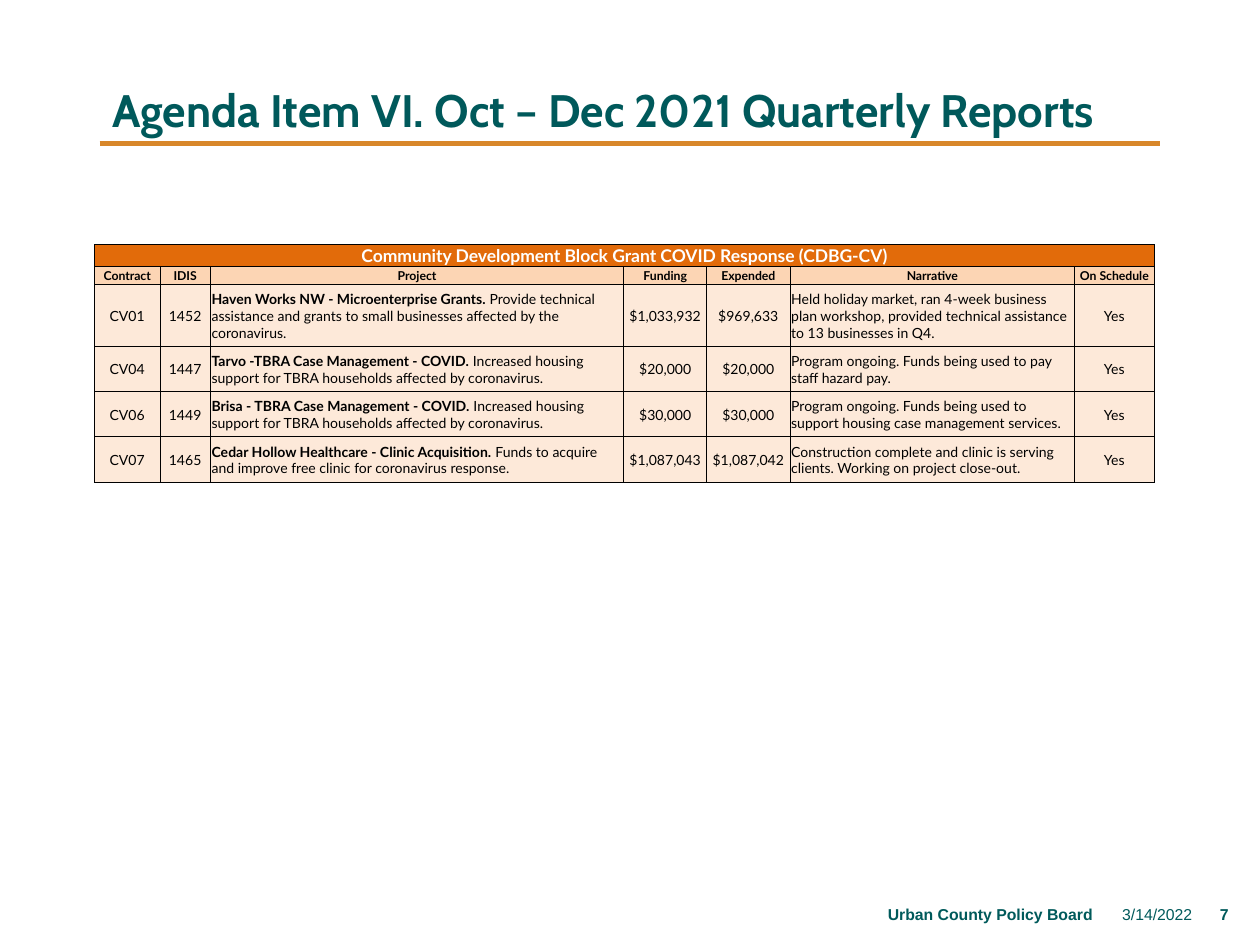
from lxml import etree
from pptx import Presentation
from pptx.dml.color import RGBColor
from pptx.enum.shapes import MSO_CONNECTOR
from pptx.enum.text import MSO_ANCHOR, PP_ALIGN
from pptx.oxml.ns import qn
from pptx.util import Inches, Pt

STRAIGHT = MSO_CONNECTOR.STRAIGHT
MIDDLE, BOTTOM = MSO_ANCHOR.MIDDLE, MSO_ANCHOR.BOTTOM
LEFT, CENTER, RIGHT = PP_ALIGN.LEFT, PP_ALIGN.CENTER, PP_ALIGN.RIGHT

TEAL = RGBColor(0x00, 0x59, 0x5B)
FOOTER_TEAL = RGBColor(0x00, 0x5A, 0x5B)
GOLD = RGBColor(0xD8, 0x87, 0x2A)
ORANGE = RGBColor(0xE2, 0x6B, 0x0A)
PEACH = RGBColor(0xFC, 0xD5, 0xB4)
CREAM = RGBColor(0xFD, 0xE9, 0xD9)
BLACK = RGBColor(0x00, 0x00, 0x00)
WHITE = RGBColor(0xFF, 0xFF, 0xFF)

MARGIN, CONTENT_W = 0.79, 8.42
RULE_Y = 1.14
TABLE_LEFT, TABLE_TOP = 0.75, 1.94
COL_WIDTHS = [0.52, 0.4, 3.28, 0.66, 0.66, 2.26, 0.63]
ROW_HEIGHTS = [0.17, 0.14, 0.49, 0.36, 0.36, 0.36]
FOOTER_TOP, FOOTER_H = 7.06, 0.4
TEXT_COLS = (2, 5)

TABLE_TITLE = "Community Development Block Grant COVID Response (CDBG-CV)"
HEADERS = ["Contract", "IDIS", "Project", "Funding", "Expended", "Narrative", "On Schedule"]
HOUSING = "Increased housing support for TBRA households affected by coronavirus."
PROJECTS = [
    ["CV01", "1452",
     ("Haven Works NW - Microenterprise Grants. ",
      "Provide technical assistance and grants to small businesses affected by the coronavirus."),
     "$1,033,932", "$969,633",
     "Held holiday market, ran 4-week business plan workshop, "
     "provided technical assistance to 13 businesses in Q4.", "Yes"],
    ["CV04", "1447", ("Tarvo -TBRA Case Management - COVID. ", HOUSING),
     "$20,000", "$20,000",
     "Program ongoing. Funds being used to pay staff hazard pay.", "Yes"],
    ["CV06", "1449", ("Brisa - TBRA Case Management - COVID. ", HOUSING),
     "$30,000", "$30,000",
     "Program ongoing. Funds being used to support housing case management services.", "Yes"],
    ["CV07", "1465",
     ("Cedar Hollow Healthcare - Clinic Acquisition. ",
      "Funds to acquire and improve free clinic for coronavirus response."),
     "$1,087,043", "$1,087,042",
     "Construction complete and clinic is serving clients. Working on project close-out.", "Yes"],
]
FOOTERS = [
    (8.77, 0.79, "3/14/2022", False),
    (2.5, 6.27, "Urban County Policy Board", True),
    (9.38, 0.47, "7", True),
]


def set_font(font, name, size, color, bold=None):
    """Apply typeface, size, colour and weight to a font."""
    font.name, font.size, font.bold = name, Pt(size), bold
    font.color.rgb = color


def format_title(slide, text):
    """Place and format the title placeholder."""
    sp = slide.shapes.title
    sp.left, sp.top = Inches(MARGIN), Inches(0.4)
    sp.width, sp.height = Inches(CONTENT_W), Inches(RULE_Y - 0.4)
    tf = sp.text_frame
    tf.text = text
    tf.vertical_anchor = BOTTOM
    p = tf.paragraphs[0]
    p.alignment, p.line_spacing = LEFT, 0.9
    set_font(p.font, "Cabin", 26, TEAL, True)


def add_rule(slide):
    """Draw the rule under the title."""
    line = slide.shapes.add_connector(
        STRAIGHT, Inches(MARGIN), Inches(RULE_Y), Inches(MARGIN + CONTENT_W), Inches(RULE_Y))
    line.line.color.rgb = GOLD
    line.line.width = Pt(3)
    etree.SubElement(line._element.spPr, qn("a:effectLst"))


def add_footer(slide, left, width, text, bold):
    """Add one right-aligned footer text."""
    sp = slide.shapes.add_textbox(
        Inches(left), Inches(FOOTER_TOP), Inches(width), Inches(FOOTER_H))
    tf = sp.text_frame
    tf.word_wrap = True
    tf.vertical_anchor = MIDDLE
    p = tf.paragraphs[0]
    p.text, p.alignment = text, RIGHT
    set_font(p.font, "Arial", 9, FOOTER_TEAL, bold)


def add_borders(cell):
    """Give a cell thin black borders on all sides."""
    tc_pr = cell._tc.get_or_add_tcPr()
    for i, side in enumerate(("lnL", "lnR", "lnT", "lnB")):
        ln = etree.Element(qn(f"a:{side}"), w=str(Pt(0.5)))
        fill = etree.SubElement(ln, qn("a:solidFill"))
        etree.SubElement(fill, qn("a:srgbClr"), val=str(BLACK))
        tc_pr.insert(i, ln)


def format_cell(cell, fill):
    """Set fill, margins, anchor and borders of a cell."""
    cell.fill.solid()
    cell.fill.fore_color.rgb = fill
    cell.margin_left = cell.margin_right = cell.margin_top = Inches(0.01)
    cell.margin_bottom = 0
    cell.vertical_anchor = MIDDLE
    add_borders(cell)


def write_cell(cell, content, size, color, bold, align):
    """Write plain text, or a bold lead followed by plain text."""
    p = cell.text_frame.paragraphs[0]
    p.alignment = align
    if isinstance(content, tuple):
        for text, weight in zip(content, (True, False)):
            r = p.add_run()
            r.text, r.font.bold = text, weight
        bold = None
    else:
        p.text = content
    set_font(p.font, "Lato", size, color, bold)


def add_grant_table(slide):
    """Add the table of grant contracts."""
    table = slide.shapes.add_table(
        len(ROW_HEIGHTS), len(COL_WIDTHS), Inches(TABLE_LEFT), Inches(TABLE_TOP),
        Inches(sum(COL_WIDTHS)), Inches(sum(ROW_HEIGHTS))).table
    for column, width in zip(table.columns, COL_WIDTHS):
        column.width = Inches(width)
    for row, height in zip(table.rows, ROW_HEIGHTS):
        row.height = Inches(height)
    fills = [ORANGE, PEACH] + [CREAM] * len(PROJECTS)
    for row, fill in zip(table.rows, fills):
        for cell in row.cells:
            format_cell(cell, fill)
    table.cell(0, 0).merge(table.cell(0, len(COL_WIDTHS) - 1))
    write_cell(table.cell(0, 0), TABLE_TITLE, 10, WHITE, True, CENTER)
    for col, header in enumerate(HEADERS):
        write_cell(table.cell(1, col), header, 7, BLACK, True, CENTER)
    for row, project in enumerate(PROJECTS, start=2):
        for col, content in enumerate(project):
            align = LEFT if col in TEXT_COLS else CENTER
            write_cell(table.cell(row, col), content, 8, BLACK, False, align)


def main():
    """Build and save the slide."""
    prs = Presentation()
    prs.slide_width, prs.slide_height = Inches(10), Inches(7.5)
    slide = prs.slides.add_slide(prs.slide_layouts[5])
    add_rule(slide)
    format_title(slide, "Agenda Item VI. Oct – Dec 2021 Quarterly Reports")
    for footer in FOOTERS:
        add_footer(slide, *footer)
    add_grant_table(slide)
    prs.save("out.pptx")


if __name__ == "__main__":
    main()
